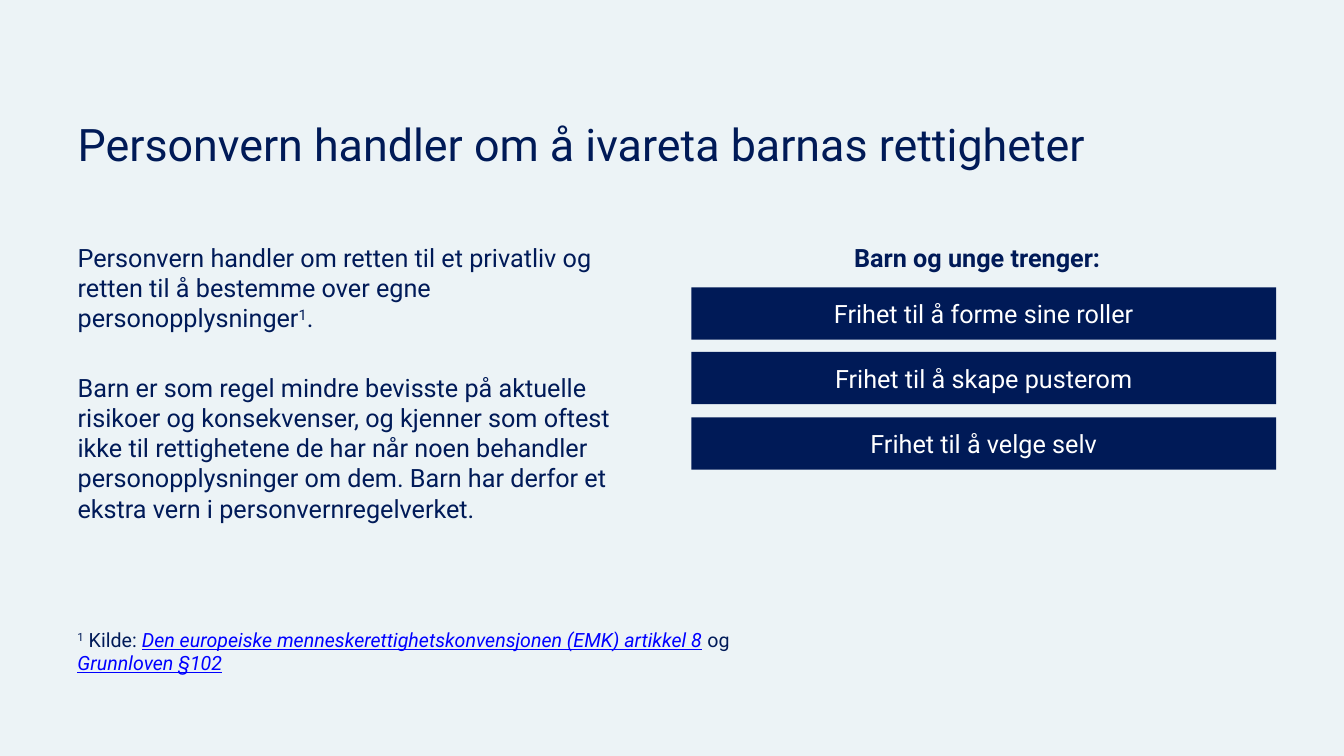
from dataclasses import dataclass

from pptx import Presentation
from pptx.dml.color import RGBColor
from pptx.enum.shapes import MSO_SHAPE
from pptx.enum.text import MSO_ANCHOR, MSO_AUTO_SIZE, PP_ALIGN
from pptx.oxml.ns import qn
from pptx.util import Emu, Pt

PX = 9144
FONT = "Roboto"
COLORS = {
    "background": "ECF3F6",
    "navy": "001A57",
    "text": "001A58",
    "link": "0000FF",
    "white": "FFFFFF",
}
RECT = MSO_SHAPE.RECTANGLE
TOP, MIDDLE = MSO_ANCHOR.TOP, MSO_ANCHOR.MIDDLE
LEFT, CENTER = PP_ALIGN.LEFT, PP_ALIGN.CENTER
NO_FIT = MSO_AUTO_SIZE.NONE


@dataclass(frozen=True)
class Box:
    left: int
    top: int
    width: int
    height: int

    def emu(self) -> tuple[Emu, ...]:
        return tuple(Emu(v * PX) for v in (self.left, self.top, self.width, self.height))


@dataclass(frozen=True)
class Run:
    text: str
    color: str = "text"
    bold: bool = False
    italic: bool = False
    underline: bool = False
    raised: bool = False


TITLE = Run("Personvern handler om å ivareta barnas rettigheter", "navy")
PRIVACY = [
    [
        Run("Personvern handler om retten til et privatliv og retten til å bestemme "
            "over egne personopplysninger"),
        Run("1", raised=True),
        Run("."),
    ],
    [
        Run("Barn er som regel mindre bevisste på aktuelle risikoer og konsekvenser, "
            "og kjenner som oftest ikke til rettighetene de har når noen behandler "
            "personopplysninger om dem. Barn har derfor et ekstra vern i "
            "personvernregelverket."),
    ],
]
NEEDS_HEADING = Run("Barn og unge trenger: ", bold=True)
NEEDS = [
    "Frihet til å forme sine roller",
    "Frihet til å skape pusterom",
    "Frihet til å velge selv",
]
SOURCES = [
    Run("1", raised=True),
    Run(" Kilde: "),
    Run("Den europeiske menneskerettighetskonvensjonen (EMK) artikkel 8", "link",
        italic=True, underline=True),
    Run(" og "),
    Run("Grunnloven §102", "link", italic=True, underline=True),
]


def rgb(name: str) -> RGBColor:
    return RGBColor.from_string(COLORS[name])


def write(sp, paragraphs: list[list[Run]], size: int = 18, align=LEFT,
          anchor=TOP, gap: int = 0) -> None:
    tf = sp.text_frame
    tf.word_wrap = True
    tf.auto_size = NO_FIT
    tf.vertical_anchor = anchor
    for i, runs in enumerate(paragraphs):
        p = tf.add_paragraph() if i else tf.paragraphs[0]
        p.alignment = align
        p.space_before = Pt(gap if i else 0)
        if sp.is_placeholder:
            pPr = p._p.get_or_add_pPr()
            pPr.set("marL", "0")
            pPr.set("indent", "0")
            pPr.append(pPr.makeelement(qn("a:buNone"), {}))
        for run in runs:
            r = p.add_run()
            r.text = run.text
            f = r.font
            f.name = FONT
            f.size = Pt(size)
            f.bold = run.bold
            f.italic = run.italic
            f.underline = run.underline
            f.color.rgb = rgb(run.color)
            if run.raised:
                r._r.get_or_add_rPr().set("baseline", "30000")


def place(sp, box: Box) -> None:
    sp.left, sp.top, sp.width, sp.height = box.emu()


def add_bar(s, box: Box, text: str) -> None:
    sp = s.shapes.add_shape(RECT, *box.emu())
    sp.shadow.inherit = False
    sp.fill.solid()
    sp.fill.fore_color.rgb = rgb("navy")
    sp.line.fill.background()
    write(sp, [[Run(text, "white")]], align=CENTER, anchor=MIDDLE)


def main() -> None:
    prs = Presentation()
    prs.slide_width, prs.slide_height = Emu(12192000), Emu(750 * PX)
    s = prs.slides.add_slide(prs.slide_layouts[3])
    s.background.fill.solid()
    s.background.fill.fore_color.rgb = rgb("background")

    title, privacy, needs = s.placeholders
    place(title, Box(67, 80, 1200, 125))
    write(title, [[TITLE]], size=32, anchor=MIDDLE)
    place(privacy, Box(67, 235, 589, 384))
    write(privacy, PRIVACY, gap=28)
    place(needs, Box(678, 235, 589, 384))
    write(needs, [[NEEDS_HEADING]], align=CENTER)

    for i, need in enumerate(NEEDS):
        add_bar(s, Box(686, 285 + i * 129 // 2, 580, 52), need)

    sources = s.shapes.add_textbox(*Box(67, 618, 731, 57).emu())
    write(sources, [SOURCES], size=14)

    prs.save("out.pptx")


if __name__ == "__main__":
    main()
